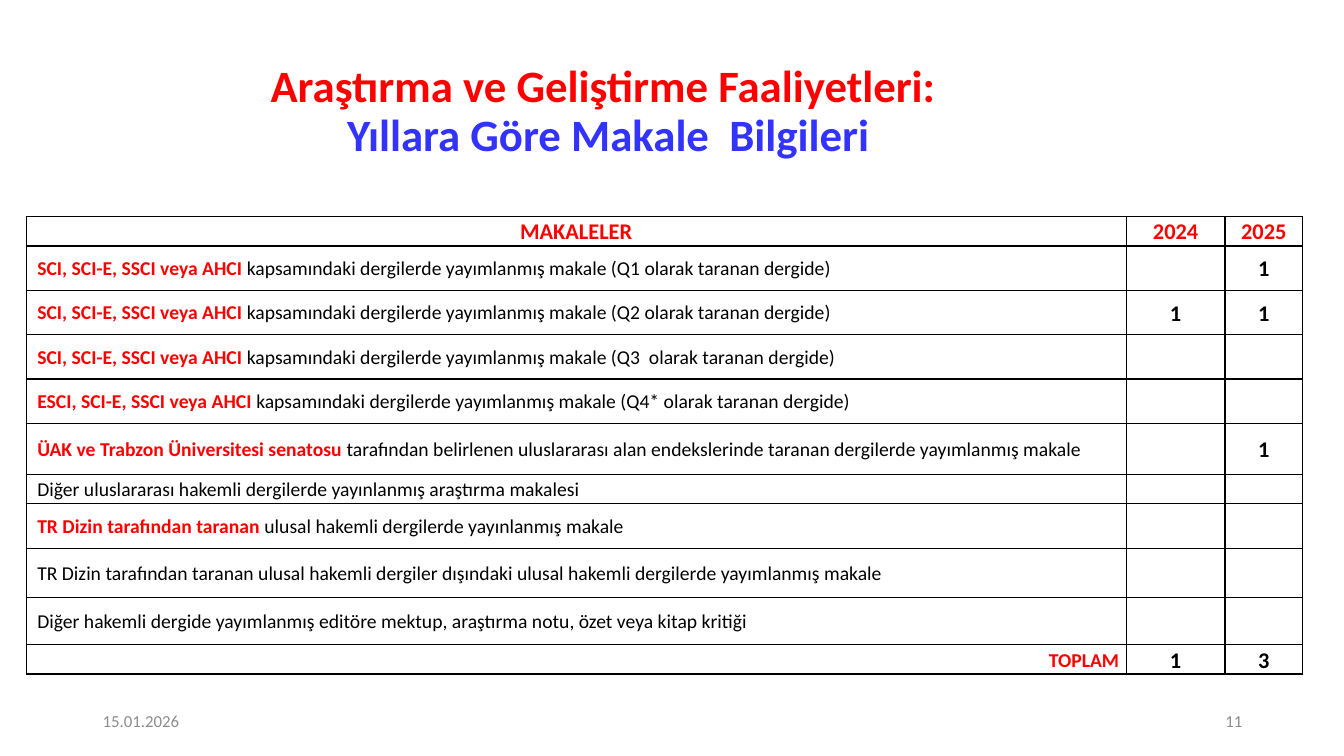
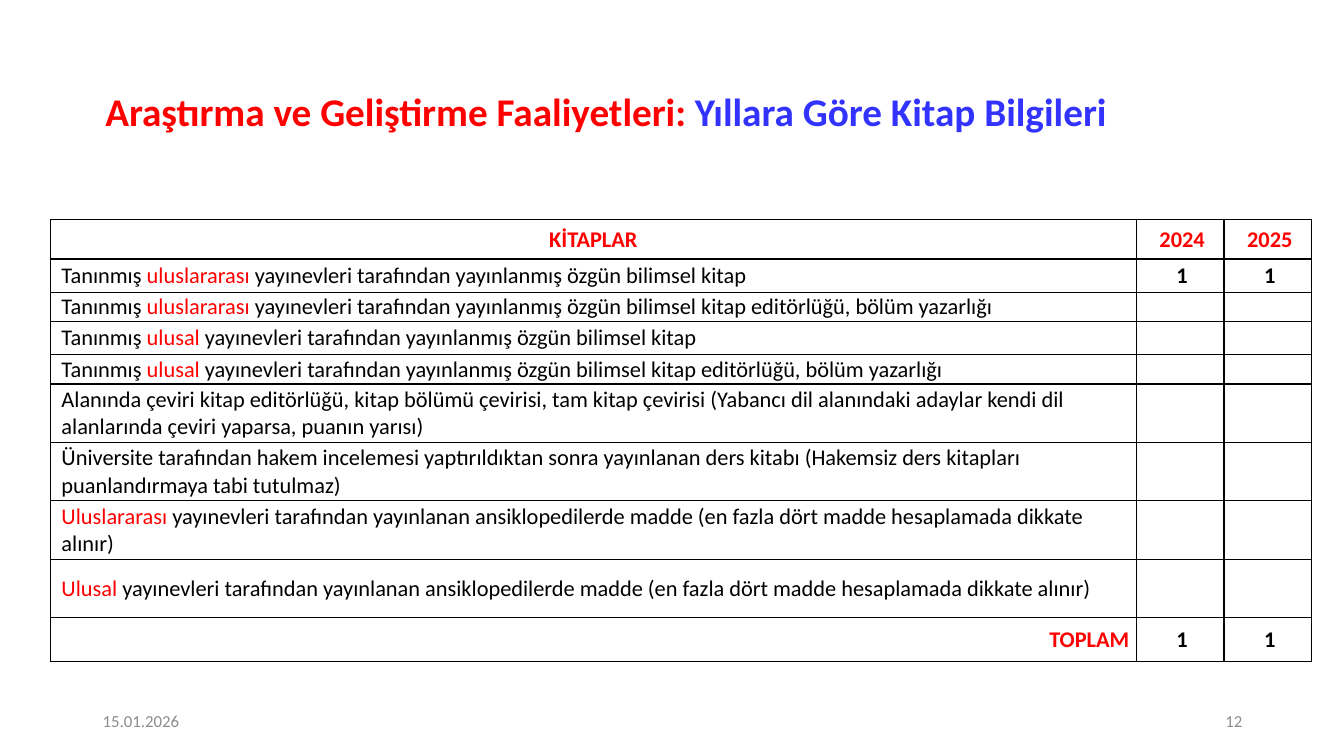
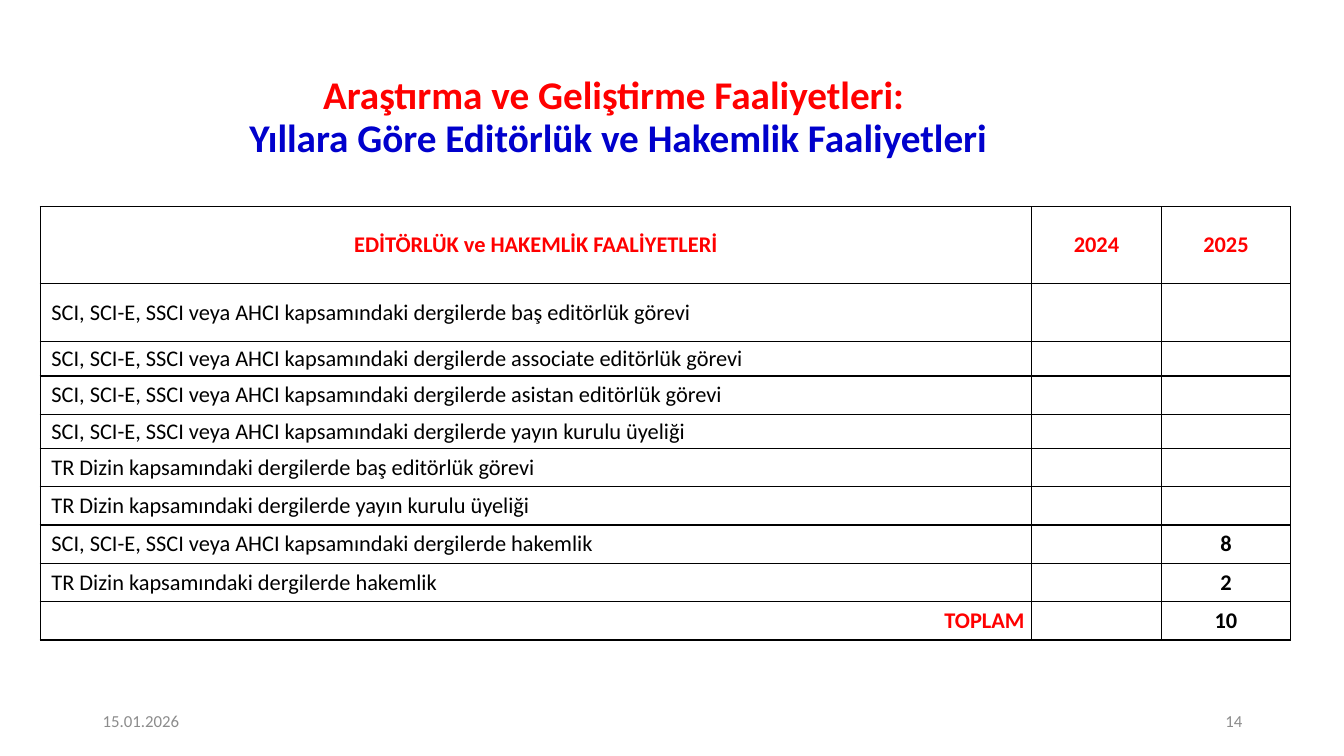
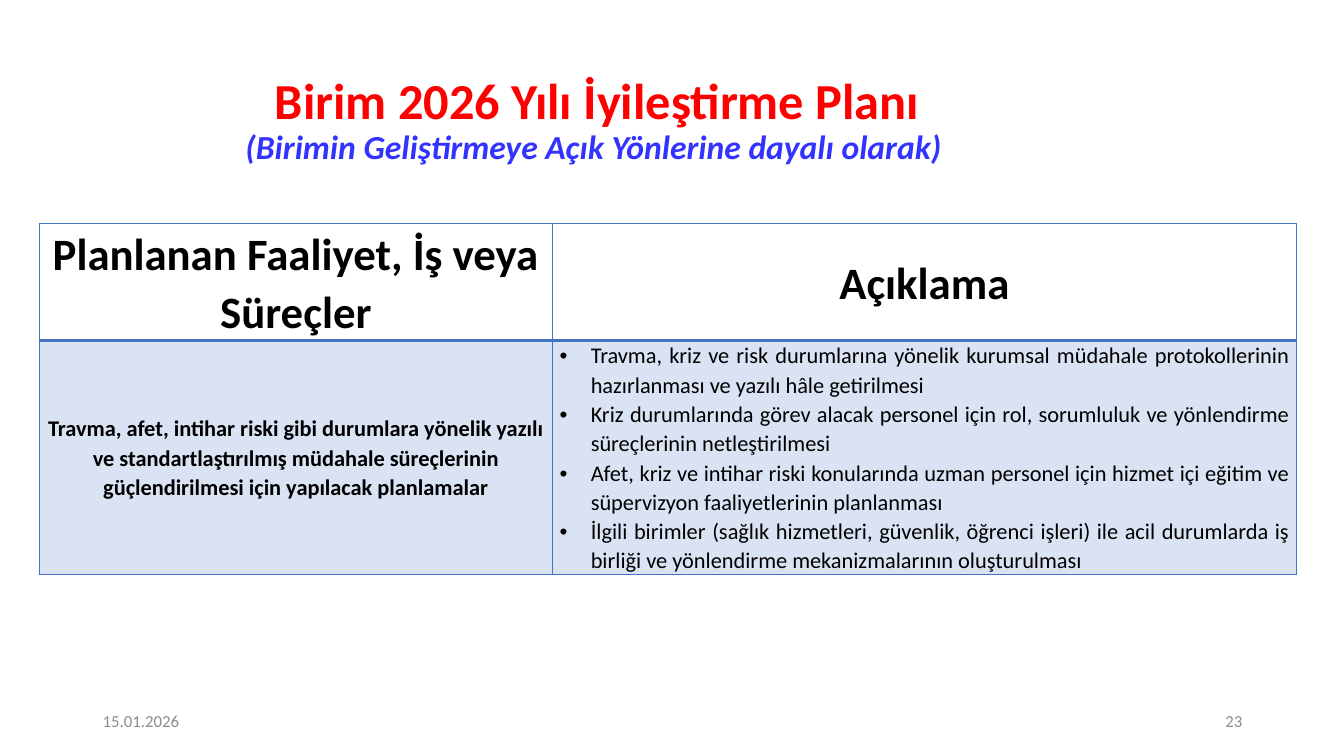
from lxml import etree
from pptx import Presentation
from pptx.dml.color import RGBColor
from pptx.enum.text import MSO_ANCHOR, MSO_AUTO_SIZE, PP_ALIGN
from pptx.oxml.ns import qn
from pptx.util import Inches, Pt

LEFT, CENTER, RIGHT, JUSTIFY = PP_ALIGN.LEFT, PP_ALIGN.CENTER, PP_ALIGN.RIGHT, PP_ALIGN.JUSTIFY
MIDDLE = MSO_ANCHOR.MIDDLE
NO_AUTOFIT = MSO_AUTO_SIZE.NONE

COLORS = {
    "red": "FF0000",
    "blue": "3333FF",
    "navy": "0000CC",
    "black": "000000",
    "gray": "8C8C8C",
    "accent": "4472C4",
    "pale": "DAE3F3",
}
FONT = "Calibri"
TITLE_ONLY = 5
DATE = "15.01.2026"
ACTIVITIES = "Araştırma ve Geliştirme Faaliyetleri: "
YEARS = ("2024", "2025")
CELL_SIZE = 16
LABEL_INDENT = 0.04
BULLET_INDENT = 0.31


def add_run(p, text, size, color="black", bold=False, italic=False):
    r = p.add_run()
    r.text = text
    r.font.name, r.font.size = FONT, Pt(size)
    r.font.bold, r.font.italic = bold, italic
    r.font.color.rgb = RGBColor.from_string(COLORS[color])


def add_titled_slide(prs, box, lines, number):
    """Add a slide; each title line is a list of (text, size, color, italic) runs."""
    s = prs.slides.add_slide(prs.slide_layouts[TITLE_ONLY])
    title = s.shapes.title
    title.left, title.top, title.width, title.height = map(Inches, box)
    tf = title.text_frame
    tf.auto_size, tf.vertical_anchor, tf.word_wrap = NO_AUTOFIT, MIDDLE, True
    p = tf.paragraphs[0]
    p.alignment, p.line_spacing = CENTER, 0.9
    for i, line in enumerate(lines):
        if i:
            p.add_line_break()
        for text, size, color, italic in line:
            add_run(p, text, size, color, True, italic)
    add_footer(s, 0.92, DATE, LEFT)
    add_footer(s, 9.42, str(number), RIGHT)
    return s


def add_footer(s, left, text, align):
    tf = s.shapes.add_textbox(Inches(left), Inches(6.95), Inches(3), Inches(0.4)).text_frame
    tf.word_wrap, tf.vertical_anchor = True, MIDDLE
    p = tf.paragraphs[0]
    p.alignment = align
    add_run(p, text, 12, "gray")


def set_borders(cell, color, bottom):
    tc_pr = cell._tc.get_or_add_tcPr()
    for side, width in (("L", 1), ("R", 1), ("T", 1), ("B", bottom)):
        ln = etree.SubElement(tc_pr, qn(f"a:ln{side}"), w=str(Pt(width)))
        fill = etree.SubElement(ln, qn("a:solidFill"))
        etree.SubElement(fill, qn("a:srgbClr"), val=COLORS[color])


def add_grid(s, left, top, widths, heights, border, header_bottom=1):
    """Add a table with plain bordered cells and return it."""
    table = s.shapes.add_table(
        len(heights), len(widths), Inches(left), Inches(top),
        Inches(sum(widths)), Inches(sum(heights))).table
    table.first_row = table.horz_banding = False
    for column, width in zip(table.columns, widths):
        column.width = Inches(width)
    for i, (row, height) in enumerate(zip(table.rows, heights)):
        row.height = Inches(height)
        for cell in row.cells:
            cell.margin_left = cell.margin_right = Inches(0.07)
            cell.margin_top = cell.margin_bottom = 0
            cell.vertical_anchor = MIDDLE
            set_borders(cell, border, 1 if i else header_bottom)
            cell.fill.background()
    return table


def format_paragraph(p, align, spacing=1.0, indent=0, bullet=False):
    p.alignment, p.line_spacing = align, spacing
    p_pr = p._p.get_or_add_pPr()
    p_pr.set("marL", str(Inches(indent)))
    p_pr.set("indent", str(-Inches(indent) if bullet else 0))
    if bullet:
        etree.SubElement(p_pr, qn("a:buFont"), typeface="Arial")
        etree.SubElement(p_pr, qn("a:buChar"), char="•")


def fill_cell(cell, runs, align, spacing, indent=0):
    """Write (text, size, color, bold) runs; an empty cell only gets a text size."""
    p = cell.text_frame.paragraphs[0]
    format_paragraph(p, align, spacing, indent)
    for run in runs:
        add_run(p, *run)
    if not runs:
        etree.SubElement(p._p, qn("a:endParaRPr"), sz=str(CELL_SIZE * 100))


def add_count_table(s, left, top, widths, heading, rows, heights, totals,
                    label_size=CELL_SIZE, spacing=1.0, bold_red=False, value_indent=0):
    """Add a table of counts per year; each row is (label parts, counts).

    A label part is a plain string, or a one-item tuple for red text.
    """
    table = add_grid(s, left, top, widths, heights, "black")

    def fill_row(i, label_runs, align, indent, values, color):
        fill_cell(table.cell(i, 0), label_runs, align, spacing, indent)
        for j, value in enumerate(values, 1):
            runs = [(value, CELL_SIZE, color, True)] if value else []
            fill_cell(table.cell(i, j), runs, CENTER, spacing, value_indent)

    fill_row(0, [(heading, CELL_SIZE, "red", True)], CENTER, 0, YEARS, "red")
    for i, (parts, values) in enumerate(rows, 1):
        runs = [(part, label_size, "black", False) if isinstance(part, str)
                else (part[0], label_size, "red", bold_red) for part in parts]
        fill_row(i, runs, LEFT, LABEL_INDENT, values, "black")
    fill_row(len(rows) + 1, [("TOPLAM", label_size, "red", True)], RIGHT, 0, totals, "black")


def add_articles(prs):
    s = add_titled_slide(
        prs, (0.26, 0.69, 11.55, 0.85),
        [[(ACTIVITIES, 32, "red", False)],
         [("Yıllara Göre Makale  Bilgileri", 32, "blue", False)]], 11)
    indexes = ("SCI, SCI-E, SSCI veya AHCI ",)
    published = "kapsamındaki dergilerde yayımlanmış makale "
    none = ("", "")
    rows = [
        ([indexes, published + "(Q1 olarak taranan dergide)"], ("", "1")),
        ([indexes, published + "(Q2 olarak taranan dergide)"], ("1", "1")),
        ([indexes, published + "(Q3  olarak taranan dergide)"], none),
        ([("ESCI, SCI-E, SSCI veya AHCI ",), published + "(Q4* olarak taranan dergide)"], none),
        ([("ÜAK ve Trabzon Üniversitesi senatosu ",),
          "tarafından belirlenen uluslararası alan endekslerinde taranan dergilerde "
          "yayımlanmış makale"], ("", "1")),
        (["Diğer uluslararası hakemli dergilerde yayınlanmış araştırma makalesi"], none),
        ([("TR Dizin tarafından taranan ",),
          "ulusal hakemli dergilerde yayınlanmış makale"], none),
        (["TR Dizin tarafından taranan ulusal hakemli dergiler dışındaki ulusal hakemli "
          "dergilerde yayımlanmış makale"], none),
        (["Diğer hakemli dergide yayımlanmış editöre mektup, araştırma notu, özet veya "
          "kitap kritiği"], none),
    ]
    heights = [0.29] + [0.44] * 4 + [0.51, 0.29, 0.44, 0.49, 0.47, 0.29]
    add_count_table(s, 0.26, 2.15, (10.91, 0.98, 0.77), "MAKALELER", rows, heights,
                    ("1", "3"), label_size=14, spacing=1.07, bold_red=True)


def add_books(prs):
    s = add_titled_slide(
        prs, (0.28, 0.71, 11.46, 0.84),
        [[(ACTIVITIES, 28, "red", False),
          ("Yıllara Göre Kitap Bilgileri", 28, "blue", False)]], 12)
    book = " yayınevleri tarafından yayınlanmış özgün bilimsel kitap"
    editing = book + " editörlüğü, bölüm yazarlığı"
    entry = (" yayınevleri tarafından yayınlanan ansiklopedilerde madde "
             "(en fazla dört madde hesaplamada dikkate alınır)")
    none = ("", "")
    rows = [
        (["Tanınmış ", ("uluslararası",), book], ("1", "1")),
        (["Tanınmış ", ("uluslararası",), editing], none),
        (["Tanınmış ", ("ulusal",), book], none),
        (["Tanınmış ", ("ulusal",), editing], none),
        (["Alanında çeviri kitap editörlüğü, kitap bölümü çevirisi, tam kitap çevirisi "
          "(Yabancı dil alanındaki adaylar kendi dil alanlarında çeviri yaparsa, "
          "puanın yarısı)"], none),
        (["Üniversite tarafından hakem incelemesi yaptırıldıktan sonra yayınlanan ders "
          "kitabı (Hakemsiz ders kitapları puanlandırmaya tabi tutulmaz)"], none),
        ([("Uluslararası",), entry], none),
        ([("Ulusal",), entry], none),
    ]
    heights = [0.39] + [0.33, 0.29] * 2 + [0.58] * 4 + [0.43]
    add_count_table(s, 0.5, 2.18, (10.77, 0.87, 0.87), "KİTAPLAR", rows, heights,
                    ("1", "1"), value_indent=LABEL_INDENT)


def add_editing(prs):
    s = add_titled_slide(
        prs, (0.51, 0.77, 11.24, 0.81),
        [[(ACTIVITIES, 28, "red", False)],
         [("Yıllara Göre Editörlük ve Hakemlik Faaliyetleri", 28, "navy", False)]], 14)
    sci = "SCI, SCI-E, SSCI veya AHCI kapsamındaki dergilerde "
    tr = "TR Dizin kapsamındaki dergilerde "
    duties = [
        (sci + "baş editörlük görevi", ""),
        (sci + "associate editörlük görevi", ""),
        (sci + "asistan editörlük görevi", ""),
        (sci + "yayın kurulu üyeliği", ""),
        (tr + "baş editörlük görevi", ""),
        (tr + "yayın kurulu üyeliği", ""),
        (sci + "hakemlik", "8"),
        (tr + "hakemlik", "2"),
    ]
    rows = [([label], ("", count)) for label, count in duties]
    heights = [0.76, 0.58] + [0.34, 0.38] * 2 + [0.38] * 4
    add_count_table(s, 0.4, 2.05, (9.83, 1.29, 1.28), "EDİTÖRLÜK ve HAKEMLİK FAALİYETLERİ",
                    rows, heights, ("", "10"))


def add_plan(prs):
    s = add_titled_slide(
        prs, (0.3, 0.78, 11.25, 0.84),
        [[("Birim 2026 Yılı İyileştirme Planı", 36, "red", False)],
         [("(Birimin Geliştirmeye Açık Yönlerine dayalı olarak) ", 24, "blue", True)]], 23)
    spacing = 1.07
    table = add_grid(s, 0.39, 2.22, (5.09, 7.38), (1.16, 2.32), "accent", header_bottom=2)
    for j, heading in enumerate(("Planlanan Faaliyet, İş veya Süreçler", "Açıklama")):
        fill_cell(table.cell(0, j), [(heading, 32, "black", True)], CENTER, spacing)
        fill = table.cell(1, j).fill
        fill.solid()
        fill.fore_color.rgb = RGBColor.from_string(COLORS["pale"])
    activity = ("Travma, afet, intihar riski gibi durumlara yönelik yazılı ve "
                "standartlaştırılmış müdahale süreçlerinin güçlendirilmesi için "
                "yapılacak planlamalar")
    fill_cell(table.cell(1, 0), [(activity, CELL_SIZE, "black", True)], CENTER, spacing)
    steps = [
        "Travma, kriz ve risk durumlarına yönelik kurumsal müdahale protokollerinin "
        "hazırlanması ve yazılı hâle getirilmesi",
        "Kriz durumlarında görev alacak personel için rol, sorumluluk ve yönlendirme "
        "süreçlerinin netleştirilmesi",
        "Afet, kriz ve intihar riski konularında uzman personel için hizmet içi eğitim ve "
        "süpervizyon faaliyetlerinin planlanması",
        "İlgili birimler (sağlık hizmetleri, güvenlik, öğrenci işleri) ile acil durumlarda iş "
        "birliği ve yönlendirme mekanizmalarının oluşturulması",
    ]
    tf = table.cell(1, 1).text_frame
    for i, step in enumerate(steps):
        p = tf.add_paragraph() if i else tf.paragraphs[0]
        format_paragraph(p, JUSTIFY, spacing, BULLET_INDENT, bullet=True)
        add_run(p, step, CELL_SIZE)


def main():
    prs = Presentation()
    prs.slide_width, prs.slide_height = Inches(13.33), Inches(7.5)
    for add_slide in (add_articles, add_books, add_editing, add_plan):
        add_slide(prs)
    prs.save("out.pptx")


if __name__ == "__main__":
    main()
